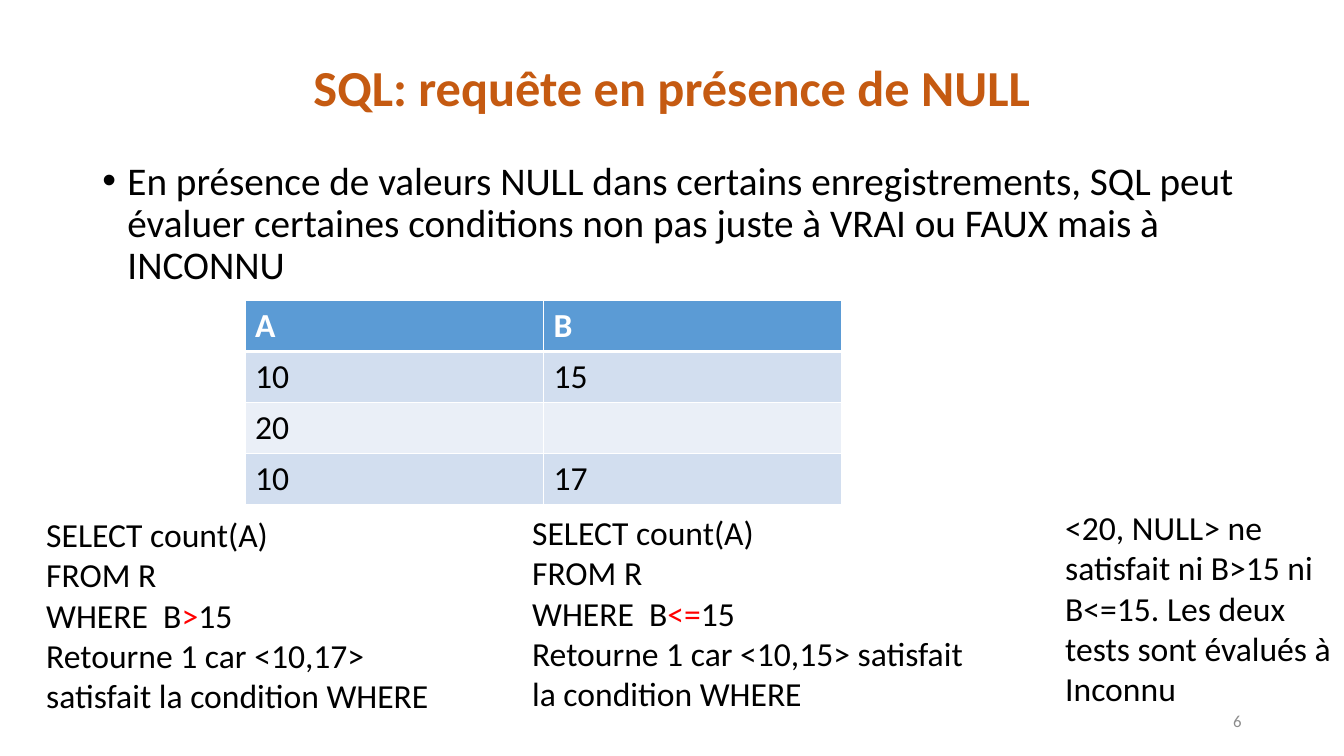
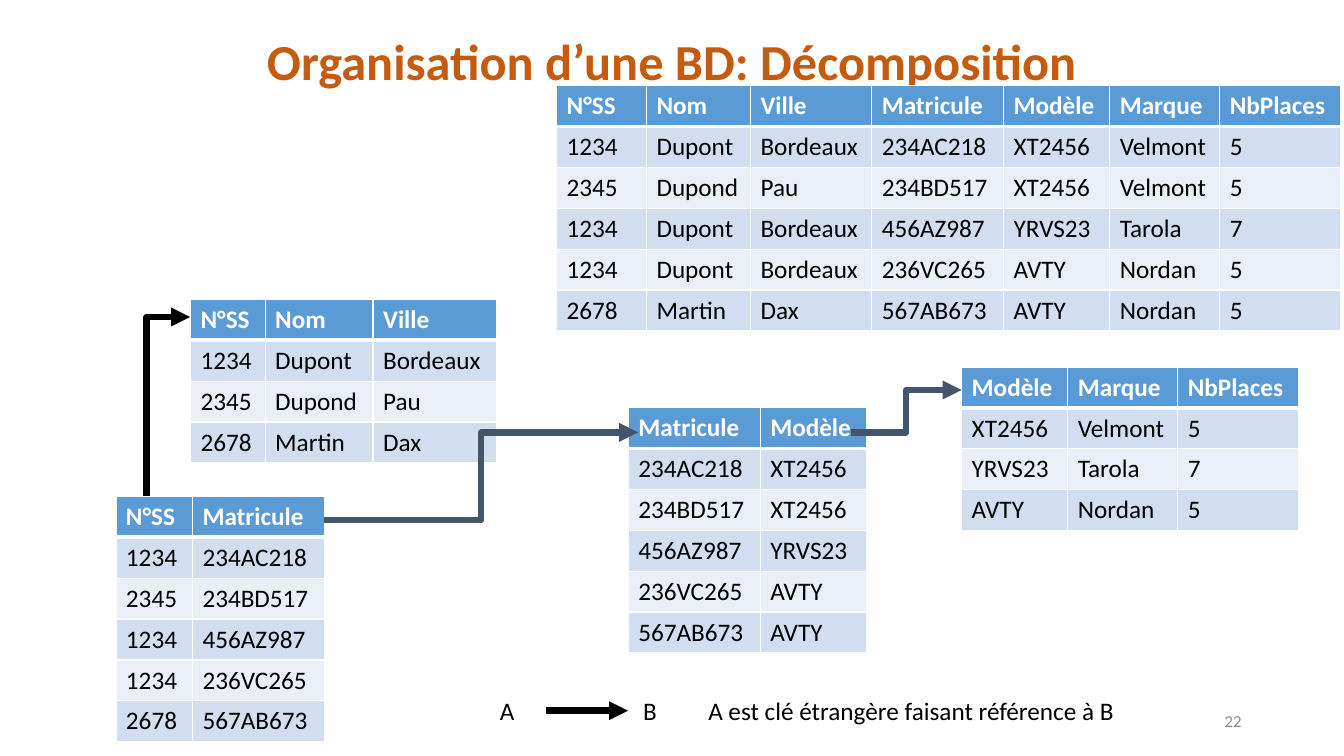
import pptx
import pptx.util
import pptx.dml.color
import pptx.enum.shapes
import pptx.enum.text
import pptx.oxml
import pptx.oxml.ns
import lxml.etree

Pt = pptx.util.Pt
qn = pptx.oxml.ns.qn
RGB = pptx.dml.color.RGBColor.from_string
ALIGN = pptx.enum.text.PP_ALIGN
ANCHOR = pptx.enum.text.MSO_ANCHOR
LINK = pptx.enum.shapes.MSO_CONNECTOR


class Theme:
    font = "Calibri"
    title, black, white, grey = "C55A11", "000000", "FFFFFF", "8C8C8C"
    red, slate = "FF0000", "44546A"
    head, bands = "5B9BD5", ("D2DEEF", "EAEFF7")
    big, body, text, small, note = 36, 28, 24, 18, 12
    thin, thick, arrow = 1, 3, 4.5


def write(frame, paras, size, color=Theme.black, bold=False, align=ALIGN.LEFT):
    """Fill a text frame; each paragraph is a list of texts or (text, colour)."""
    frame.word_wrap = True
    for i, runs in enumerate(paras):
        para = frame.paragraphs[0] if i == 0 else frame.add_paragraph()
        para.alignment = align
        for part in runs:
            text, tint = (part, color) if isinstance(part, str) else part
            run = para.add_run()
            run.text = text
            run.font.name = Theme.font
            run.font.size = Pt(size)
            run.font.bold = bold
            run.font.color.rgb = RGB(tint)


def grid(slide, left, top, widths, height, rows, size):
    """Add a banded table with white rules; the first row is the header."""
    table = slide.shapes.add_table(
        len(rows), len(widths), Pt(left), Pt(top),
        Pt(sum(widths)), Pt(height * len(rows))).table
    for col, width in zip(table.columns, widths):
        col.width = Pt(width)
    for r, row in enumerate(rows):
        table.rows[r].height = Pt(height)
        for c, text in enumerate(row):
            cell = table.cell(r, c)
            props = cell._tc.get_or_add_tcPr()
            for side in "LRTB":
                heavy = (r, side) in ((0, "B"), (1, "T"))
                line = lxml.etree.SubElement(props, qn("a:ln" + side))
                line.set("w", str(Pt(Theme.thick if heavy else Theme.thin)))
                fill = lxml.etree.SubElement(line, qn("a:solidFill"))
                lxml.etree.SubElement(fill, qn("a:srgbClr")).set("val", Theme.white)
            cell.fill.solid()
            cell.fill.fore_color.rgb = RGB(Theme.bands[(r - 1) % 2] if r else Theme.head)
            write(cell.text_frame, [[text]] if text else [], size,
                  Theme.black if r else Theme.white, r == 0)


deck = pptx.Presentation()
deck.slide_width, deck.slide_height = Pt(960), Pt(540)

# Titles and page numbers
slides = []
for title, top, page in (
    ("SQL: requête en présence de NULL", 28.8, "6"),
    ("Organisation d’une BD: Décomposition", 10, "22"),
):
    slide = deck.slides.add_slide(deck.slide_layouts[6])
    slides.append(slide)
    frame = slide.shapes.add_textbox(Pt(66), Pt(top), Pt(828), Pt(72)).text_frame
    frame.vertical_anchor = ANCHOR.MIDDLE
    write(frame, [[title]], Theme.big, Theme.title, True, ALIGN.CENTER)
    frame.paragraphs[0].line_spacing = 0.9
    frame = slide.shapes.add_textbox(Pt(678), Pt(500.5), Pt(216), Pt(28.8)).text_frame
    frame.vertical_anchor = ANCHOR.MIDDLE
    write(frame, [[page]], Theme.note, Theme.grey, align=ALIGN.RIGHT)
nulls, split = slides

# Slide 1: bullet
frame = nulls.shapes.add_textbox(Pt(66), Pt(111.6), Pt(828), Pt(268)).text_frame
write(frame, [["En présence de valeurs NULL dans certains enregistrements, SQL peut "
               "évaluer certaines conditions non pas juste à VRAI ou FAUX mais à "
               "INCONNU"]], Theme.body)
para = frame.paragraphs[0]
para.line_spacing = 0.9
para.space_before = Pt(10)
props = para._p.get_or_add_pPr()
props.set("marL", str(Pt(18)))
props.set("indent", str(Pt(-18)))
lxml.etree.SubElement(props, qn("a:buFont")).set("typeface", "Arial")
lxml.etree.SubElement(props, qn("a:buChar")).set("char", "•")

# Slide 1: table
grid(nulls, 175, 214.6, [213.2, 213.2], 36.5,
     [("A", "B"), ("10", "15"), ("20", ""), ("10", "17")], Theme.text)

# Slide 1: queries and remark
for left, top, width, sign, pair in (
    (25.9, 363.6, 314, ">", "<10,17>"),
    (373, 362.2, 330.5, "<=", "<10,15>"),
):
    frame = nulls.shapes.add_textbox(Pt(left), Pt(top), Pt(width), Pt(152.6)).text_frame
    write(frame, [["SELECT count(A)"], ["FROM R"],
                  ["WHERE  B", (sign, Theme.red), "15"],
                  [f"Retourne 1 car {pair} satisfait la condition WHERE"]], Theme.text)
frame = nulls.shapes.add_textbox(Pt(753.8), Pt(358.6), Pt(206), Pt(152.6)).text_frame
write(frame, [["<20, NULL> ne satisfait ni B>15 ni B<=15. "
               "Les deux tests sont évalués à Inconnu"]], Theme.text)

# Slide 2: the whole relation and its projections, without duplicates
cars = [
    ("N°SS", "Nom", "Ville", "Matricule", "Modèle", "Marque", "NbPlaces"),
    ("1234", "Dupont", "Bordeaux", "234AC218", "XT2456", "Velmont", "5"),
    ("2345", "Dupond", "Pau", "234BD517", "XT2456", "Velmont", "5"),
    ("1234", "Dupont", "Bordeaux", "456AZ987", "YRVS23", "Tarola", "7"),
    ("1234", "Dupont", "Bordeaux", "236VC265", "AVTY", "Nordan", "5"),
    ("2678", "Martin", "Dax", "567AB673", "AVTY", "Nordan", "5"),
]
for left, top, keep, widths in (
    (397.6, 61.2, range(7), [64.2, 74.3, 86.6, 94.2, 75.8, 78.6, 86.6]),
    (136.1, 213.9, (0, 1, 2), [53.3, 77.1, 88.2]),
    (686.9, 262.2, (4, 5, 6), [75.8, 78.6, 86.6]),
    (448.8, 291.2, (3, 4), [94.2, 75.8]),
    (82.8, 354.6, (0, 3), [54.7, 94.2]),
):
    rows = list(dict.fromkeys(tuple(row[i] for i in keep) for row in cars))
    grid(split, left, top, widths, 29.2, rows, Theme.small)

# Slide 2: arrows from foreign key to key; the third is turned a quarter
for kind, start, end, color, turn in (
    (LINK.ELBOW, (607.7, 308.9), (686.9, 278.6), Theme.slate, False),
    (LINK.ELBOW, (231.8, 371.5), (455.8, 308.9), Theme.slate, False),
    (LINK.ELBOW, (184.3, 306), (56.2, 275), Theme.black, True),
    (LINK.STRAIGHT, (390.2, 507.6), (448.6, 507.6), Theme.black, False),
):
    link = split.shapes.add_connector(kind, *map(Pt, start + end))
    link.line.color.rgb = RGB(color)
    link.line.width = Pt(Theme.arrow)
    tip = lxml.etree.SubElement(link.line._get_or_add_ln(), qn("a:tailEnd"))
    tip.set("type", "triangle")
    props = link._element.spPr
    lxml.etree.SubElement(props, qn("a:effectLst"))
    if turn:
        props.find(qn("a:xfrm")).set("rot", str(90 * 60000))
        bend = props.find(qn("a:prstGeom")).find(qn("a:avLst"))
        guide = lxml.etree.SubElement(bend, qn("a:gd"))
        guide.set("name", "adj1")
        guide.set("fmla", "val 100000")

# Slide 2: legend
for left, width, text in (
    (350, 47.5, "A"),
    (452.2, 40, "B"),
    (498.8, 395, "A est clé étrangère faisant référence à B"),
):
    frame = split.shapes.add_textbox(Pt(left), Pt(493.2), Pt(width), Pt(29)).text_frame
    write(frame, [[text]], Theme.small)

deck.save("out.pptx")
